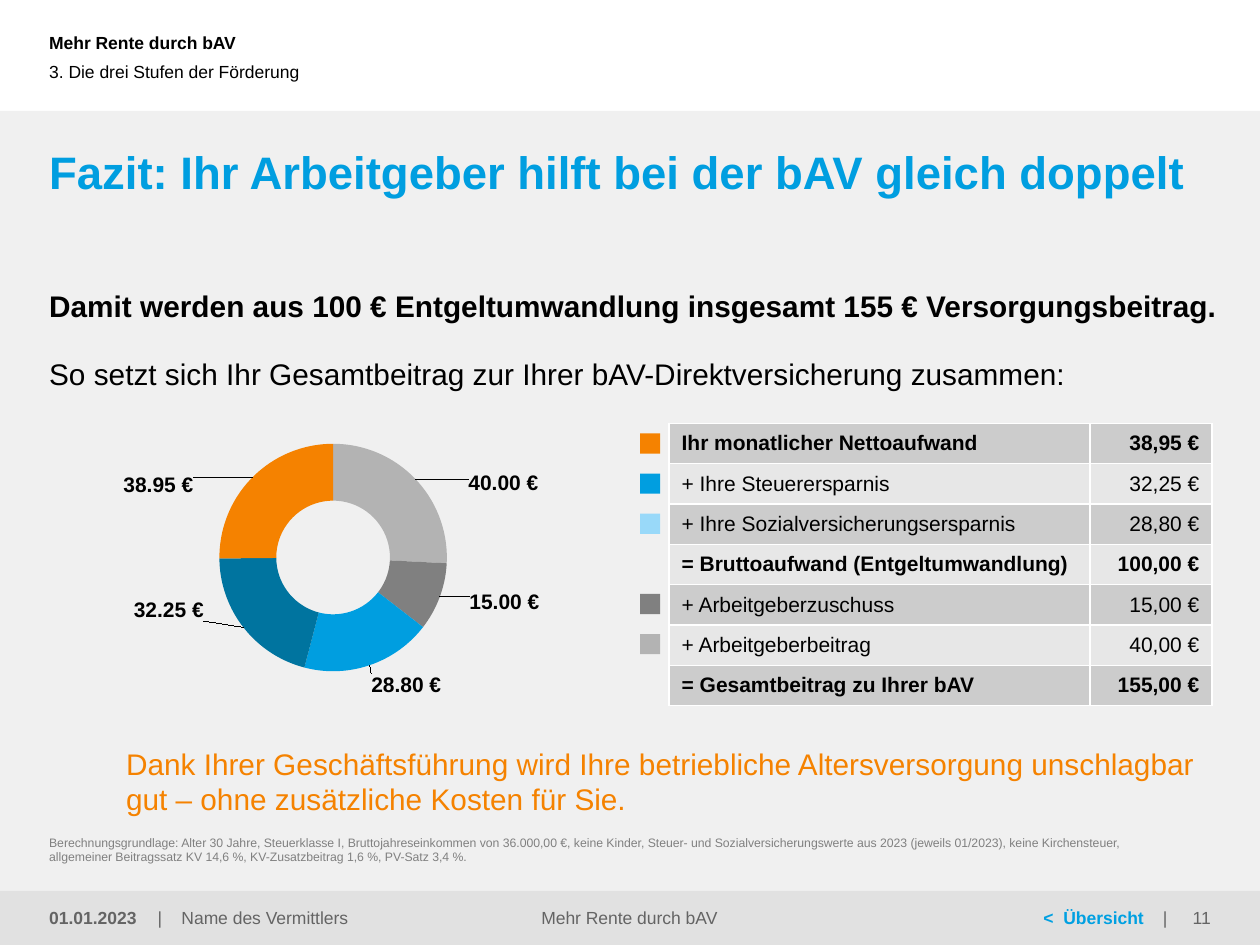
from pptx import Presentation
from pptx.chart.data import CategoryChartData
from pptx.dml.color import RGBColor
from pptx.enum.chart import XL_CHART_TYPE as ChartType
from pptx.enum.shapes import MSO_SHAPE as Shape
from pptx.enum.text import MSO_ANCHOR as Anchor, PP_ALIGN as Align
from pptx.oxml import parse_xml
from pptx.oxml.ns import nsdecls, qn
from pptx.util import Inches, Pt

COLORS = {
    "white": "FFFFFF", "black": "000000", "panel": "F0F0F0", "footer": "E1E1E1",
    "text": "646464", "link": "00A0E1", "blue": "009EE0", "dark_blue": "00749F",
    "light_blue": "99D9F9", "orange": "F58200", "gray": "808080",
    "light_gray": "B3B3B3", "odd_row": "CCCCCC", "even_row": "E7E7E7",
}
BREAKDOWN = [
    ("Ihr monatlicher Nettoaufwand", "38,95 €", True, "orange"),
    ("+ Ihre Steuerersparnis", "32,25 €", False, "blue"),
    ("+ Ihre Sozialversicherungsersparnis", "28,80 €", False, "light_blue"),
    ("= Bruttoaufwand (Entgeltumwandlung)", "100,00 €", True, None),
    ("+ Arbeitgeberzuschuss", "15,00 €", False, "gray"),
    ("+ Arbeitgeberbeitrag", "40,00 €", False, "light_gray"),
    ("= Gesamtbeitrag zu Ihrer bAV", "155,00 €", True, None),
]
SEGMENTS = [
    (40, "light_gray", 0.19, -0.05),
    (15, "gray", 0.16, 0.05),
    (28.8, "blue", 0.08, 0.15),
    (32.25, "dark_blue", -0.17, 0),
    (38.95, "orange", -0.2, -0.04),
]
CURRENCY = '#,##0.00\\ "€"'


def rgb(name):
    """Return the named colour."""
    return RGBColor.from_string(COLORS[name])


def apply(target, values):
    """Set attributes from a dict of format values."""
    for name, value in values.items():
        setattr(target, name, value)


def set_font(font, size, color="black", bold=False):
    """Format a font in Arial."""
    apply(font, {"name": "Arial", "size": Pt(size), "bold": bold})
    font.color.rgb = rgb(color)


def add_box(slide, box, color):
    """Add a plain filled rectangle."""
    shape = slide.shapes.add_shape(Shape.RECTANGLE, *map(Inches, box))
    shape.shadow.inherit = False
    shape.fill.solid()
    shape.fill.fore_color.rgb = rgb(color)
    shape.line.fill.background()


def add_text(slide, box, runs, size, align=Align.LEFT, anchor=Anchor.MIDDLE,
             margins=(0, 0, 0, 0), tabs=()):
    """Add one paragraph made of (text, colour, bold) runs."""
    frame = slide.shapes.add_textbox(*map(Inches, box)).text_frame
    left, top, right, bottom = map(Inches, margins)
    apply(frame, {"word_wrap": True, "vertical_anchor": anchor,
                  "margin_left": left, "margin_top": top,
                  "margin_right": right, "margin_bottom": bottom})
    paragraph = frame.paragraphs[0]
    paragraph.alignment = align
    if tabs:
        stops = "".join(f'<a:tab pos="{Inches(stop)}" algn="l"/>' for stop in tabs)
        paragraph.alignment = align
        paragraph._p.get_or_add_pPr().append(
            parse_xml(f'<a:tabLst {nsdecls("a")}>{stops}</a:tabLst>'))
    for text, color, bold in runs:
        for index, line in enumerate(text.split("\n")):
            if index:
                paragraph.add_line_break()
            run = paragraph.add_run()
            run.text = line
            set_font(run.font, size, color, bold)


def add_header(slide, box):
    """Add the presentation title and the chapter name."""
    left, top, width, height = box
    add_text(slide, (left, top, width, 0.67), [("Mehr Rente durch bAV", "black", True)],
             10, margins=(0.39, 0.05, 0.1, 0.05))
    add_text(slide, (left, top + 0.25, width, height - 0.25),
             [("3. Die drei Stufen der Förderung", "black", False)],
             10, margins=(0.39, 0, 0, 0))


def add_footer(slide, box):
    """Add the footer band with date, names, link and page number."""
    left, top, width, height = box
    add_box(slide, box, "footer")
    parts = [
        (0, 1.22, [("01.01.2023", "text", True)], Align.LEFT, (0.39, 0.05, 0.1, 0.05), ()),
        (1.25, 2.42, [("|\tName des Vermittlers", "text", False)], Align.LEFT,
         (0, 0, 0, 0), (0.19,)),
        (2.93, 4.13, [("Mehr Rente durch bAV", "text", False)], Align.CENTER,
         (0, 0, 0, 0), ()),
        (6.88, 2.42, [("<\tÜbersicht", "link", True), ("\t|", "text", False)], Align.LEFT,
         (1.4, 0, 0, 0), (0.16, 0.95)),
        (9.06, 0.94, [("11", "text", False)], Align.RIGHT, (0.1, 0.05, 0.39, 0.05), ()),
    ]
    for offset, part_width, runs, align, margins, tabs in parts:
        add_text(slide, (left + offset, top, part_width, height), runs, 10,
                 align, margins=margins, tabs=tabs)


def add_statements(slide, box):
    """Add the headline, lead sentences, conclusion and footnote."""
    left, top, width, height = box
    lines = [
        (1.14, 0.55, 26, "blue", True, "Fazit: Ihr Arbeitgeber hilft bei der bAV gleich doppelt"),
        (2.28, 0.29, 17, "black", True,
         "Damit werden aus 100 € Entgeltumwandlung insgesamt 155 € Versorgungsbeitrag."),
        (2.82, 0.29, 17, "black", False,
         "So setzt sich Ihr Gesamtbeitrag zur Ihrer bAV-Direktversicherung zusammen:"),
    ]
    for line_top, line_height, size, color, bold, text in lines:
        add_text(slide, (left, top + line_top - 0.88, width, line_height),
                 [(text, color, bold)], size, anchor=Anchor.TOP)
    add_text(slide, (left + 0.61, top + 5.02, 8.61, 0.68),
             [("Dank Ihrer Geschäftsführung wird Ihre betriebliche Altersversorgung "
               "unschlagbar gut – ohne zusätzliche Kosten für Sie.", "orange", False)],
             17, margins=(0, 0, 0, 0.08))
    add_text(slide, (left, top + 5.86, 9.21, 0.12),
             [("Berechnungsgrundlage: Alter 30 Jahre, Steuerklasse I, Bruttojahreseinkommen von "
               "36.000,00 €, keine Kinder, Steuer- und Sozialversicherungswerte aus 2023 "
               "(jeweils 01/2023), keine Kirchensteuer, \nallgemeiner Beitragssatz KV 14,6 %, "
               "KV-Zusatzbeitrag 1,6 %, PV-Satz 3,4 %.", "gray", False)],
             7, anchor=Anchor.BOTTOM)


def manual_layout(**values):
    """Build a manual chart layout element."""
    parts = "".join(f'<c:{name} val="{value}"/>' for name, value in values.items())
    return parse_xml(f'<c:layout {nsdecls("c")}><c:manualLayout>{parts}'
                     "</c:manualLayout></c:layout>")


def add_contribution_chart(slide, box):
    """Add the doughnut chart with labels set outside the ring."""
    data = CategoryChartData(number_format=CURRENCY)
    data.categories = [str(number + 1) for number in range(len(SEGMENTS))]
    data.add_series("Series 1", [segment[0] for segment in SEGMENTS])
    chart = slide.shapes.add_chart(ChartType.DOUGHNUT, *map(Inches, box), data).chart
    apply(chart, {"has_legend": False, "has_title": False})
    apply(chart.font, {"name": "Arial Narrow", "size": Pt(11.9)})
    plot = chart.plots[0]
    plot.vary_by_categories = True
    series = plot.series[0]
    labels = series.data_labels
    apply(labels, {"show_value": True, "number_format": CURRENCY,
                   "number_format_is_linked": False})
    set_font(labels.font, 12, bold=True)
    for index, (_, color, _, _) in enumerate(SEGMENTS):
        point = series.points[index]
        point.format.fill.solid()
        point.format.fill.fore_color.rgb = rgb(color)
        point.format.line.fill.background()
        set_font(point.data_label.font, 12, bold=True)
    for label, (_, _, x, y) in zip(chart.element.iter(qn("c:dLbl")), SEGMENTS):
        number_format = parse_xml(f'<c:numFmt {nsdecls("c")} sourceLinked="0"/>')
        number_format.set("formatCode", CURRENCY)
        index_element = label.find(qn("c:idx"))
        index_element.addnext(number_format)
        index_element.addnext(manual_layout(x=x, y=y))
    area = chart.element.find(".//" + qn("c:plotArea"))
    for layout in area.findall(qn("c:layout")):
        area.remove(layout)
    area.insert(0, manual_layout(layoutTarget="inner", xMode="edge", yMode="edge",
                                 x=0.296, y=0.078, w=0.399, h=0.731))
    chart.element.find(".//" + qn("c:holeSize")).set("val", "75")


def format_cell(cell, text, bold, align, color):
    """Fill a table cell with text, white borders and a background."""
    apply(cell, {"text": text, "vertical_anchor": Anchor.MIDDLE,
                 "margin_left": Inches(0.1), "margin_right": Inches(0.1),
                 "margin_top": Inches(0.06), "margin_bottom": Inches(0.06)})
    paragraph = cell.text_frame.paragraphs[0]
    paragraph.alignment = align
    set_font(paragraph.runs[0].font, 12, bold=bold)
    properties = cell._tc.get_or_add_tcPr()
    for side in "LRTB":
        properties.append(parse_xml(
            f'<a:ln{side} {nsdecls("a")} w="{Pt(1)}"><a:solidFill>'
            f'<a:srgbClr val="{COLORS["white"]}"/></a:solidFill></a:ln{side}>'))
    cell.fill.solid()
    cell.fill.fore_color.rgb = rgb(color)


def add_breakdown_table(slide, box):
    """Add the contribution table and its colour keys on the left."""
    left, top, width, height = box
    row_height = height / len(BREAKDOWN)
    table = slide.shapes.add_table(len(BREAKDOWN), 2, *map(Inches, box)).table
    for column, column_width in zip(table.columns, (width - 0.97, 0.97)):
        column.width = Inches(column_width)
    for index, (name, amount, bold, key) in enumerate(BREAKDOWN):
        table.rows[index].height = Inches(row_height)
        color = "even_row" if index % 2 else "odd_row"
        format_cell(table.cell(index, 0), name, bold, Align.LEFT, color)
        format_cell(table.cell(index, 1), amount, bold, Align.RIGHT, color)
        if key:
            add_box(slide, (left - 0.23, top + index * row_height + 0.08, 0.16, 0.16), key)


def main():
    """Build and save the slide."""
    presentation = Presentation()
    apply(presentation, {"slide_width": Inches(10), "slide_height": Inches(7.5)})
    slide = presentation.slides.add_slide(presentation.slide_layouts[6])
    add_box(slide, (0, 0.88, 10, 6.62), "panel")
    add_header(slide, (0, 0, 7.15, 0.88))
    add_statements(slide, (0.39, 0.88, 9.61, 6.19))
    add_contribution_chart(slide, (0.4, 3.33, 4.53, 2.47))
    add_breakdown_table(slide, (5.31, 3.36, 4.31, 2.23))
    add_footer(slide, (0, 7.07, 10, 0.43))
    presentation.save("out.pptx")


if __name__ == "__main__":
    main()
